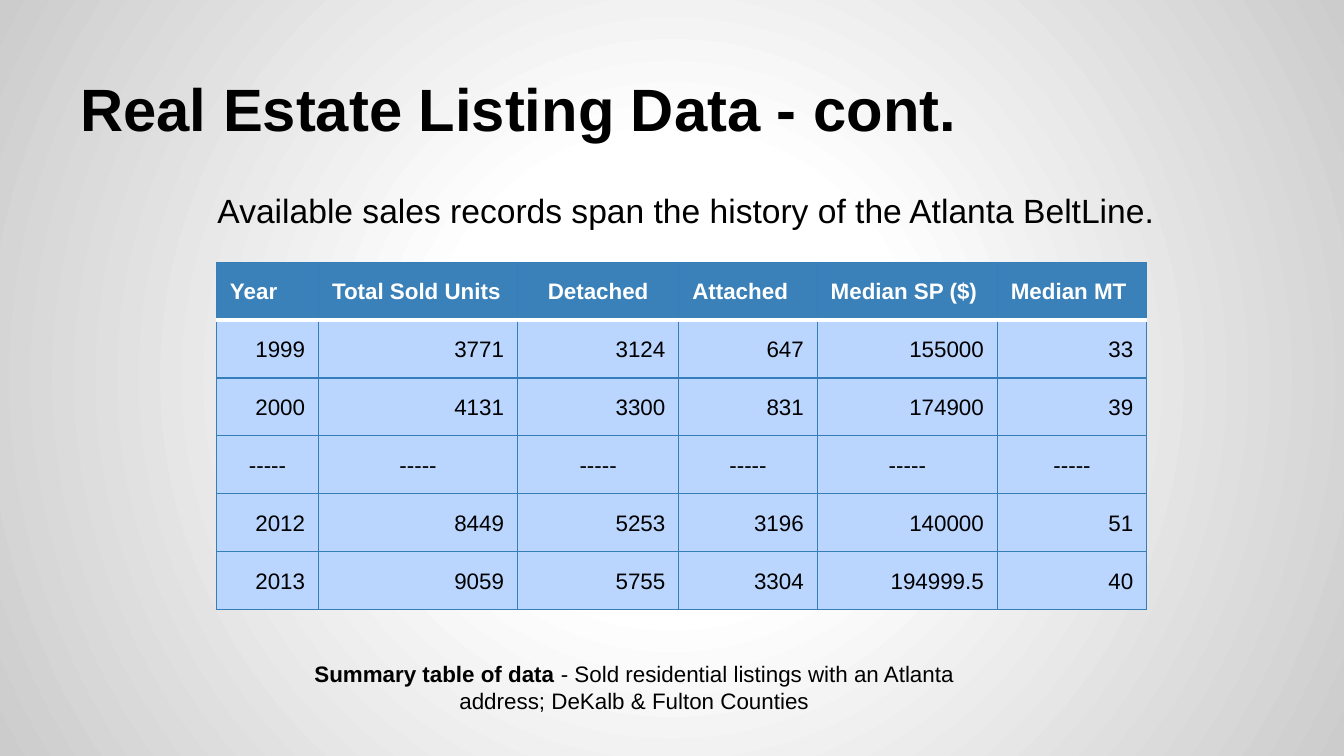
from pptx import Presentation
from pptx.dml.color import RGBColor
from pptx.enum import text
from pptx.oxml import parse_xml
from pptx.oxml.ns import nsdecls, qn
from pptx.util import Pt

FONT = "Arial"
BLACK = RGBColor(0x00, 0x00, 0x00)
WHITE = RGBColor(0xFF, 0xFF, 0xFF)
EDGE_GREY = RGBColor(0xCC, 0xCC, 0xCC)
HEADER_BLUE = RGBColor(0x3A, 0x81, 0xBA)
BORDER_BLUE = RGBColor(0x36, 0x7E, 0xB9)
CELL_BLUE = RGBColor(0xBA, 0xD6, 0xFF)

LEFT, CENTER, RIGHT = (text.PP_ALIGN.LEFT, text.PP_ALIGN.CENTER,
                       text.PP_ALIGN.RIGHT)
INSET = Pt(7.2)
MARGINS = {"margin_left": INSET, "margin_top": INSET,
           "margin_right": INSET, "margin_bottom": INSET}

COLUMN_WIDTHS = [54.7, 106.6, 86.4, 74.2, 96.5, 80]
ROW_HEIGHTS = [31, 31, 31, 21, 31, 31]
GAP_ROW = ["-----"] * len(COLUMN_WIDTHS)
SALES = [
    ["Year", "Total Sold Units", "Detached", "Attached", "Median SP ($)",
     "Median MT"],
    ["1999", "3771", "3124", "647", "155000", "33"],
    ["2000", "4131", "3300", "831", "174900", "39"],
    GAP_ROW,
    ["2012", "8449", "5253", "3196", "140000", "51"],
    ["2013", "9059", "5755", "3304", "194999.5", "40"],
]


def apply(target, values):
    for name, value in values.items():
        setattr(target, name, value)


def set_background(slide):
    """Fill the slide with a radial gradient, white to grey."""
    slide.background.fill.solid()
    properties = slide.element.find(".//" + qn("p:bgPr"))
    stops = "".join(
        f'<a:gs pos="{position * 1000}"><a:srgbClr val="{color}"/></a:gs>'
        for position, color in [(0, WHITE), (30, WHITE), (100, EDGE_GREY)])
    gradient = parse_xml(
        f'<a:gradFill {nsdecls("a")}><a:gsLst>{stops}</a:gsLst>'
        '<a:path path="circle"><a:fillToRect l="50000" t="50000" '
        'r="50000" b="50000"/></a:path></a:gradFill>')
    properties.replace(properties.find(qn("a:solidFill")), gradient)


def write_runs(paragraph, runs, size, color=BLACK):
    """Add (wording, bold) runs to a paragraph."""
    for wording, bold in runs:
        run = paragraph.add_run()
        run.text = wording
        apply(run.font, {"name": FONT, "size": Pt(size), "bold": bold})
        run.font.color.rgb = color


def add_text(slide, box, runs, size, align=LEFT,
             anchor=text.MSO_ANCHOR.TOP):
    shape = slide.shapes.add_textbox(*map(Pt, box))
    frame = shape.text_frame
    apply(frame, {**MARGINS, "word_wrap": True, "vertical_anchor": anchor})
    paragraph = frame.paragraphs[0]
    paragraph.alignment = align
    write_runs(paragraph, runs, size)
    return paragraph


def set_border(cell, side, color, width):
    properties = cell._tc.get_or_add_tcPr()
    line = parse_xml(
        f'<a:{side} {nsdecls("a")} w="{Pt(width)}"><a:solidFill>'
        f'<a:srgbClr val="{color}"/></a:solidFill></a:{side}>')
    properties.append(line)


def format_cell(cell, wording, row, column):
    header = row == 0
    if header:
        align = CENTER if wording == "Detached" else LEFT
    else:
        align = CENTER if wording == GAP_ROW[column] else RIGHT
    apply(cell, MARGINS)
    paragraph = cell.text_frame.paragraphs[0]
    apply(paragraph, {"alignment": align, "line_spacing": 1.15})
    write_runs(paragraph, [(wording, header)], 12, WHITE if header else BLACK)

    # Borders come before the fill; the header is underlined in white
    white_side = {0: "lnB", 1: "lnT"}.get(row)
    for side in ("lnL", "lnR", "lnT", "lnB"):
        if side == white_side:
            set_border(cell, side, WHITE, 2)
        else:
            set_border(cell, side, BORDER_BLUE, 0.75)
    cell.fill.solid()
    cell.fill.fore_color.rgb = HEADER_BLUE if header else CELL_BLUE


def add_sales_table(slide, left, top):
    frame = slide.shapes.add_table(
        len(SALES), len(COLUMN_WIDTHS), Pt(left), Pt(top),
        Pt(sum(COLUMN_WIDTHS)), Pt(sum(ROW_HEIGHTS)))
    table = frame.table
    apply(table, {"first_row": False, "horz_banding": False})
    for column, width in zip(table.columns, COLUMN_WIDTHS):
        column.width = Pt(width)
    for row, height in zip(table.rows, ROW_HEIGHTS):
        row.height = Pt(height)
    for row, values in enumerate(SALES):
        for column, wording in enumerate(values):
            format_cell(table.cell(row, column), wording, row, column)


def main():
    presentation = Presentation()
    apply(presentation, {"slide_width": Pt(720), "slide_height": Pt(405)})
    slide = presentation.slides.add_slide(presentation.slide_layouts[6])
    set_background(slide)

    # Title
    add_text(slide, (36, 16.5, 648, 67.7),
             [("Real Estate Listing Data - cont.", True)], 32,
             anchor=text.MSO_ANCHOR.BOTTOM)

    # Introductory sentence, indented
    sentence = add_text(
        slide, (36, 94.5, 648, 293),
        [("Available sales records span the history of the Atlanta BeltLine.",
          False)], 18, CENTER)
    sentence.space_before = Pt(6)
    properties = sentence._p.get_or_add_pPr()
    properties.set("marL", str(Pt(27)))
    properties.set("indent", str(Pt(-12)))

    # Sales figures
    add_sales_table(slide, 116, 140.5)

    # Caption
    add_text(slide, (155.5, 346.5, 368.6, 41.8),
             [("Summary table of data", True),
              (" - Sold residential listings with an Atlanta address; "
               "DeKalb & Fulton Counties", False)], 12, CENTER)

    presentation.save("out.pptx")


if __name__ == "__main__":
    main()
